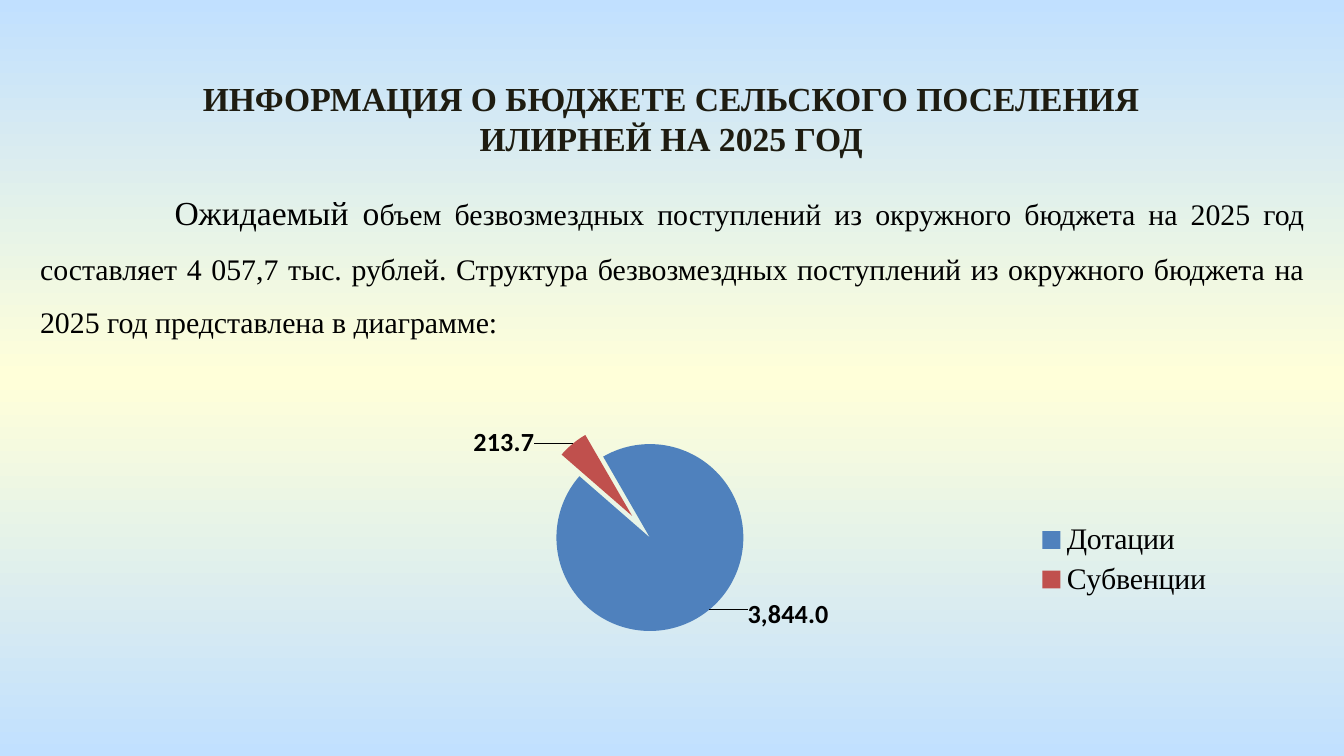
from copy import deepcopy

from pptx import Presentation
from pptx.chart.data import CategoryChartData
from pptx.dml.color import RGBColor
from pptx.enum.chart import XL_CHART_TYPE as Chart, XL_LABEL_POSITION as LabelPos
from pptx.enum.chart import XL_LEGEND_POSITION as LegendPos
from pptx.enum.text import MSO_AUTO_SIZE as AutoSize, PP_ALIGN as Align
from pptx.oxml import parse_xml
from pptx.oxml.ns import nsdecls, qn
from pptx.util import Inches, Pt


def rgb(value):
    return RGBColor.from_string(value)


def chart_xml(tag, body=""):
    return parse_xml(f"<c:{tag} {nsdecls('c')} {body}")


def manual_layout(target="", **values):
    inner = ""
    if target:
        inner = (f'<c:layoutTarget val="{target}"/>'
                 '<c:xMode val="edge"/><c:yMode val="edge"/>')
    inner += "".join(f'<c:{k} val="{v}"/>' for k, v in values.items())
    return chart_xml("layout", f"><c:manualLayout>{inner}</c:manualLayout></c:layout>")


class Deck:
    SERIF = "Times New Roman"
    SANS = "Calibri"
    BLACK = "000000"
    TITLE = "1E1C11"

    def __init__(self, width, height):
        self.prs = Presentation()
        self.prs.slide_width = Inches(width)
        self.prs.slide_height = Inches(height)
        self.slide = self.prs.slides.add_slide(self.prs.slide_layouts[6])

    def style(self, font, color=BLACK, **values):
        for name, value in values.items():
            setattr(font, name, value)
        font.color.rgb = rgb(color)

    def background(self, *colors):
        fill = self.slide.background.fill
        fill.gradient()
        fill.gradient_angle = 90
        first = self.slide.background._cSld.find(".//" + qn("a:gs"))
        first.addnext(deepcopy(first))
        for i, (stop, color) in enumerate(zip(fill.gradient_stops, colors)):
            stop.color.rgb = rgb(color)
            stop.color.brightness = 0
            stop.position = i / (len(colors) - 1)

    def text(self, box, runs, align, spacing=1.0, tab=None):
        sp = self.slide.shapes.add_textbox(*map(Inches, box))
        tf = sp.text_frame
        tf.word_wrap = True
        tf.auto_size = AutoSize.SHAPE_TO_FIT_TEXT
        p = tf.paragraphs[0]
        p.alignment = align
        p.line_spacing = spacing
        if tab:
            p._p.get_or_add_pPr().append(parse_xml(
                f'<a:tabLst {nsdecls("a")}>'
                f'<a:tab pos="{Inches(tab)}" algn="l"/></a:tabLst>'))
        for text, fmt in runs:
            r = p.add_run()
            r.text = text
            self.style(r.font, **fmt)

    def pie(self, box, name, slices, plot_box, start, explosion):
        data = CategoryChartData(number_format="#,##0.0")
        data.categories = [label for label, *_ in slices]
        data.add_series(name, [value for _, value, *_ in slices])
        frame = self.slide.shapes.add_chart(Chart.PIE, *map(Inches, box), data)
        chart = frame.chart
        chart.has_title = False
        self.style(chart.font, size=Pt(18), name=self.SANS)
        chart.has_legend = True
        chart.legend.position = LegendPos.RIGHT
        chart.legend.include_in_layout = False
        self.style(chart.legend.font, size=Pt(16), name=self.SERIF)

        plot = chart.plots[0]
        plot.vary_by_categories = True
        series = plot.series[0]
        pie = series._element.getparent()
        for old in pie.findall(qn("c:firstSliceAng")):
            pie.remove(old)
        pie.append(chart_xml("firstSliceAng", f'val="{start}"/>'))
        area = pie.getparent()
        for old in area.findall(qn("c:layout")):
            area.remove(old)
        shares = [part / whole for part, whole in zip(plot_box, box[2:] * 2)]
        area.insert(0, manual_layout("inner", **dict(zip("xywh", shares))))
        series._element.find(qn("c:tx")).addnext(
            chart_xml("explosion", f'val="{explosion}"/>'))

        bold = dict(size=Pt(14), bold=True, name=self.SANS)
        labels = series.data_labels
        labels.show_value = True
        labels.number_format = "#,##0.0"
        labels.number_format_is_linked = False
        labels.position = LabelPos.OUTSIDE_END
        self.style(labels.font, **bold)
        for i, (_, _, color, x, y) in enumerate(slices):
            point = series.points[i]
            point.format.fill.solid()
            point.format.fill.fore_color.rgb = rgb(color)
            label = point.data_label
            self.style(label.font, **bold)
            label.position = LabelPos.OUTSIDE_END
            idx = series._element.findall(".//" + qn("c:dLbl"))[i].find(qn("c:idx"))
            idx.addnext(manual_layout(x=x, y=y))

    def save(self):
        self.prs.save("out.pptx")


def main():
    deck = Deck(10, 10 * 9 / 16)
    deck.background("C1E0FF", "FFFFD9", "C1E0FF")
    large = dict(size=Pt(18), name=deck.SERIF)
    deck.text((1.13, 0.53, 7.73, 0.71), [
        ("ИНФОРМАЦИЯ О БЮДЖЕТЕ СЕЛЬСКОГО ПОСЕЛЕНИЯ ИЛИРНЕЙ НА 2025 ГОД",
         dict(large, bold=True, color=deck.TITLE)),
    ], Align.CENTER)
    deck.text((0.2, 1.23, 9.61, 1.36), [
        ("\t", dict(large, name=deck.SANS)),
        ("Ожидаемый о", large),
        ("бъем безвозмездных поступлений из окружного бюджета на 2025 год "
         "составляет 4 057,7 тыс. рублей. Структура безвозмездных поступлений "
         "из окружного бюджета на 2025 год представлена в диаграмме:",
         dict(large, size=Pt(16))),
    ], Align.JUSTIFY, 1.5, tab=1)
    deck.pie((0.88, 2.89, 8.25, 2.55), "Series 1", [
        ("Дотации", 3844, "4F81BD", 0.03, -0.05),
        ("Субвенции", 213.7, "C0504D", -0.03, 0.06),
    ], (3.09, 0.23, 1.6, 1.6), start=330, explosion=15)
    deck.save()


if __name__ == "__main__":
    main()
